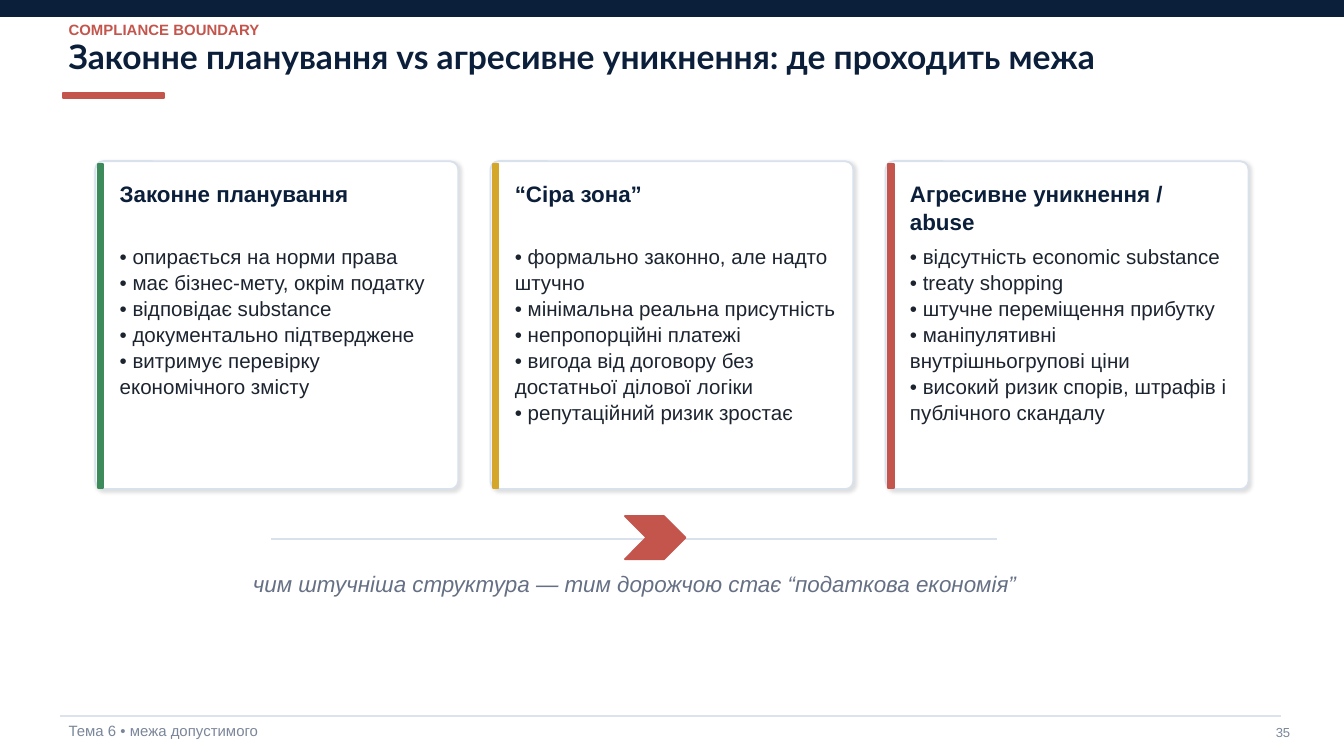
from dataclasses import dataclass

from lxml.etree import SubElement
from pptx import Presentation
from pptx.dml.color import RGBColor
from pptx.enum.shapes import MSO_CONNECTOR, MSO_SHAPE
from pptx.enum.text import MSO_ANCHOR, PP_ALIGN
from pptx.oxml.ns import qn
from pptx.util import Pt


@dataclass(frozen=True)
class Theme:
    navy: str = "0B1F3A"
    red: str = "C4554D"
    green: str = "3D8B5A"
    gold: str = "D4A62A"
    white: str = "FFFFFF"
    ink: str = "1C2430"
    caption: str = "667085"
    footer: str = "7A8699"
    border: str = "D9E1EC"
    rule: str = "DDE3ED"
    heading_font: str = "Lato"
    body_font: str = "Arial"
    title_size: float = 18
    heading_size: float = 12
    body_size: float = 11
    small_size: float = 8
    page_size: float = 7


THEME = Theme()
WIDTH, HEIGHT = 720, 405
CARD_LEFT, CARD_TOP, CARD_WIDTH, CARD_HEIGHT = 51.12, 86.4, 194.4, 175.68
CARD_STEP = 211.68
CARDS = [
    ("Законне планування", THEME.green, [
        "опирається на норми права",
        "має бізнес-мету, окрім податку",
        "відповідає substance",
        "документально підтверджене",
        "витримує перевірку економічного змісту",
    ]),
    ("“Сіра зона”", THEME.gold, [
        "формально законно, але надто штучно",
        "мінімальна реальна присутність",
        "непропорційні платежі",
        "вигода від договору без достатньої ділової логіки",
        "репутаційний ризик зростає",
    ]),
    ("Агресивне уникнення / abuse", THEME.red, [
        "відсутність economic substance",
        "treaty shopping",
        "штучне переміщення прибутку",
        "маніпулятивні внутрішньогрупові ціни",
        "високий ризик спорів, штрафів і публічного скандалу",
    ]),
]


def add_text(slide, box, lines, *, size, color, font=THEME.body_font, bold=False,
             italic=False, align=PP_ALIGN.LEFT, spacing=None):
    frame = slide.shapes.add_textbox(*map(Pt, box)).text_frame
    frame.word_wrap = True
    frame.vertical_anchor = MSO_ANCHOR.TOP
    frame.margin_left = frame.margin_right = Pt(2.88)
    frame.margin_top = frame.margin_bottom = Pt(2.16)
    frame.text = "\n".join(lines)
    for paragraph in frame.paragraphs:
        paragraph.alignment = align
        paragraph.line_spacing = spacing
        for run in paragraph.runs:
            run.font.name = font
            run.font.size = Pt(size)
            run.font.bold = bold
            run.font.italic = italic
            run.font.color.rgb = RGBColor.from_string(color)


def add_block(slide, preset, box, fill, line=None, adjustment=None):
    block = slide.shapes.add_shape(preset, *map(Pt, box))
    block.shadow.inherit = False
    block.fill.solid()
    block.fill.fore_color.rgb = RGBColor.from_string(fill)
    block.line.color.rgb = RGBColor.from_string(line or fill)
    block.line.width = Pt(1)
    if adjustment is not None:
        block.adjustments[0] = adjustment
    return block


def add_rule(slide, left, right, y, color):
    rule = slide.shapes.add_connector(
        MSO_CONNECTOR.STRAIGHT, Pt(left), Pt(y), Pt(right), Pt(y))
    rule.line.color.rgb = RGBColor.from_string(color)
    rule.line.width = Pt(1)
    SubElement(rule._element.spPr, qn("a:effectLst"))


def add_soft_shadow(block):
    effects = block._element.spPr.find(qn("a:effectLst"))
    shadow = SubElement(effects, qn("a:outerShdw"), blurRad=str(Pt(2)),
                        dist=str(Pt(1)), dir=str(45 * 60000),
                        algn="tl", rotWithShape="0")
    black = SubElement(shadow, qn("a:srgbClr"), val="000000")
    SubElement(black, qn("a:alpha"), val="12000")


def add_header(slide, left, top, width):
    add_block(slide, MSO_SHAPE.RECTANGLE, (0, top, width, 8.64), THEME.navy)
    add_text(slide, (left, top + 17.28, 604.8, 38.88),
             ["Законне планування vs агресивне уникнення: де проходить межа"],
             size=THEME.title_size, color=THEME.navy, font=THEME.heading_font, bold=True)
    add_text(slide, (left, top + 8.64, 216, 5.04), ["COMPLIANCE BOUNDARY"],
             size=THEME.small_size, color=THEME.red, bold=True)
    add_block(slide, MSO_SHAPE.RECTANGLE, (left, top + 49.68, 54, 2.88), THEME.red)


def add_card(slide, left, top, width, height, heading, accent, points):
    card = add_block(slide, MSO_SHAPE.ROUNDED_RECTANGLE, (left, top, width, height),
                     THEME.white, THEME.border, 0.025)
    add_soft_shadow(card)
    add_block(slide, MSO_SHAPE.RECTANGLE,
              (left + 1.44, top + 1.44, 2.88, height - 2.16), accent)
    text_left, text_width = left + 10.08, width - 15.12
    add_text(slide, (text_left, top + 7.2, text_width, 18.72), [heading],
             size=THEME.heading_size, color=THEME.navy, bold=True, spacing=1.05)
    add_text(slide, (text_left, top + 41.76, text_width, height - 48.24),
             [f"• {point}" for point in points],
             size=THEME.body_size, color=THEME.ink, spacing=1.05)


def add_conclusion(slide, left, top, width):
    add_rule(slide, left + 26.64, left + 415.44, top + 12.24, THEME.border)
    add_block(slide, MSO_SHAPE.CHEVRON, (left + 216, top, 32.4, 23.04),
              THEME.red, adjustment=0.5)
    add_text(slide, (left, top + 26.64, width, 10.8),
             ["чим штучніша структура — тим дорожчою стає “податкова економія”"],
             size=THEME.heading_size, color=THEME.caption, italic=True,
             align=PP_ALIGN.CENTER)


def add_footer(slide, left, top, width):
    add_rule(slide, left, left + width, top, THEME.rule)
    add_text(slide, (left + 1.44, top + 0.72, 232.56, 8.64),
             ["Тема 6 • межа допустимого"], size=THEME.small_size, color=THEME.footer)
    add_text(slide, (left + width - 13.68, top + 2.16, 21.6, 10.8), ["35"],
             size=THEME.page_size, color=THEME.footer, align=PP_ALIGN.RIGHT)


def main():
    deck = Presentation()
    deck.slide_width, deck.slide_height = Pt(WIDTH), Pt(HEIGHT)
    slide = deck.slides.add_slide(deck.slide_layouts[6])
    slide.background.fill.solid()
    slide.background.fill.fore_color.rgb = RGBColor.from_string(THEME.white)
    add_header(slide, 33.84, 0, WIDTH)
    for index, card in enumerate(CARDS):
        add_card(slide, CARD_LEFT + index * CARD_STEP, CARD_TOP,
                 CARD_WIDTH, CARD_HEIGHT, *card)
    add_conclusion(slide, 118.8, 276.48, 442.8)
    add_footer(slide, 32.4, 383.76, 653.76)
    deck.save("out.pptx")


if __name__ == "__main__":
    main()
